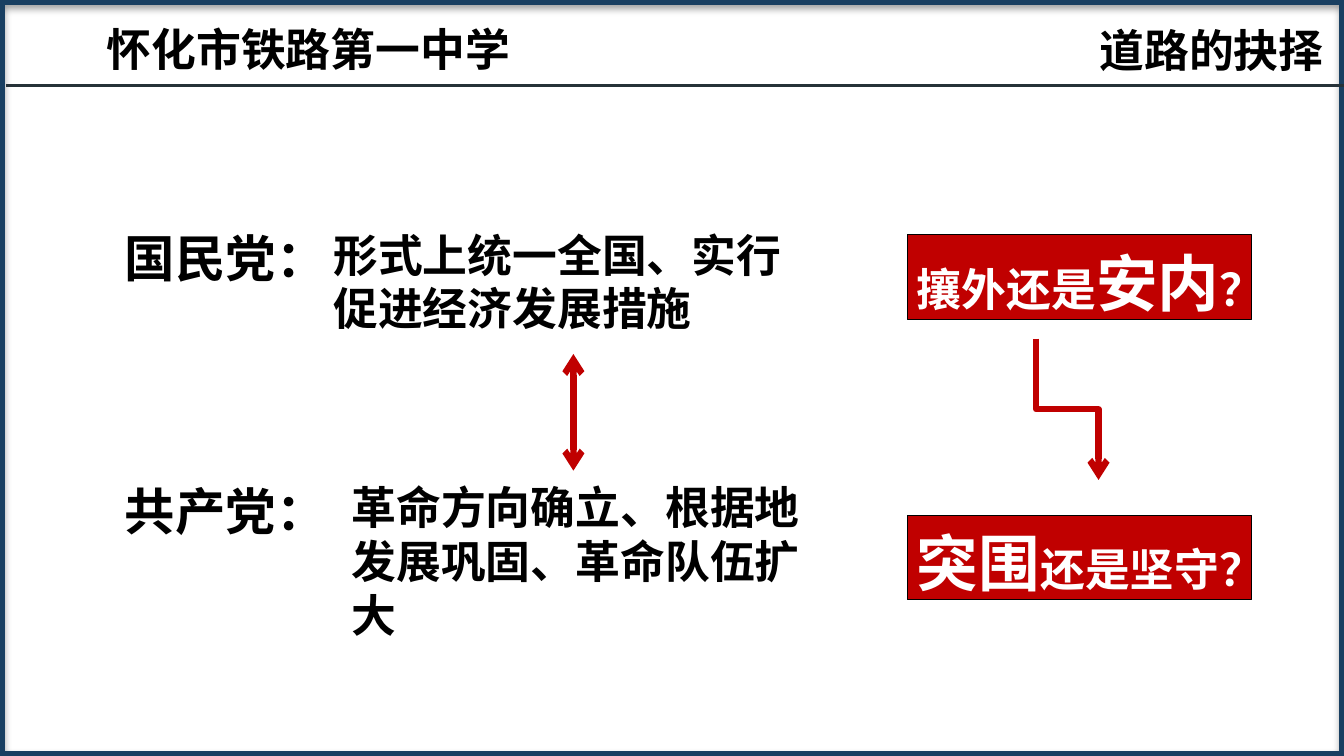
from collections import namedtuple
from dataclasses import dataclass

from lxml.etree import SubElement
from pptx import Presentation
from pptx.dml.color import RGBColor
from pptx.enum.shapes import MSO_CONNECTOR, MSO_SHAPE
from pptx.enum.text import MSO_ANCHOR, MSO_AUTO_SIZE, PP_ALIGN
from pptx.oxml.ns import qn
from pptx.util import Cm, Pt

Box = namedtuple("Box", "left top width height")


@dataclass(frozen=True)
class Theme:
    black: RGBColor = RGBColor(0x00, 0x00, 0x00)
    white: RGBColor = RGBColor(0xFF, 0xFF, 0xFF)
    red: RGBColor = RGBColor(0xC0, 0x00, 0x00)
    frame: RGBColor = RGBColor(0x19, 0x3F, 0x61)
    rule: RGBColor = RGBColor(0x26, 0x32, 0x38)
    body: int = 32
    label: int = 36
    emphasis: int = 44
    leading: float = 1.2
    chinese: str = "Noto Sans CJK SC"
    heading: str = "Noto Sans CJK JP"
    latin: str = "Arial"


THEME = Theme()


def apply_format(target, values):
    for name, value in values.items():
        setattr(target, name, value)


def place(shape, box):
    apply_format(shape, {name: Cm(value) for name, value in box._asdict().items()})


def inside(box, left, top, width, height):
    return Box(box.left + left, box.top + top, width, height)


def write(shape, runs, face=THEME.chinese, color=THEME.black, align=PP_ALIGN.LEFT):
    frame = shape.text_frame
    apply_format(frame, {
        "word_wrap": True, "auto_size": MSO_AUTO_SIZE.NONE,
        "vertical_anchor": MSO_ANCHOR.TOP, "margin_top": Cm(0.24),
        "margin_bottom": Cm(0.13), "margin_left": Cm(0.25), "margin_right": Cm(0.25),
    })
    paragraph = frame.paragraphs[0]
    largest = max(size for _, size in runs)
    apply_format(paragraph, {
        "alignment": align, "space_before": Pt(0),
        "line_spacing": Pt(round(largest * THEME.leading, 1)),
    })
    for text, size in runs:
        run = paragraph.add_run()
        run.text = text
        apply_format(run.font, {"size": Pt(size), "bold": True, "name": face})
        run.font.color.rgb = color
        SubElement(run.font._element, qn("a:ea"), typeface=face)


def add_text(slide, box, text, size=THEME.body, face=THEME.chinese):
    shape = slide.shapes.add_textbox(0, 0, 0, 0)
    place(shape, box)
    write(shape, [(text, size)], face)


def add_line(slide, start, end, color, weight, kind=MSO_CONNECTOR.STRAIGHT, arrows=()):
    points = [Cm(value) for value in (*start, *end)]
    connector = slide.shapes.add_connector(kind, *points)
    connector.line.width = Pt(weight)
    connector.line.color.rgb = color
    outline = connector.line._get_or_add_ln()
    if arrows:
        SubElement(outline, qn("a:round"))
    for arrow in arrows:
        SubElement(outline, qn(f"a:{arrow}"), type="arrow")
    SubElement(connector._element.spPr, qn("a:effectLst"))
    return connector


def add_frame(slide, box):
    frame = slide.shapes.add_shape(MSO_SHAPE.RECTANGLE, 0, 0, 0, 0)
    place(frame, box)
    frame.fill.background()
    frame.line.width = Pt(7)
    frame.line.color.rgb = THEME.frame
    effects = SubElement(frame._element.spPr, qn("a:effectLst"))
    shadow = SubElement(effects, qn("a:outerShdw"), blurRad=str(Pt(5.2)),
                        dist=str(Pt(3)), dir="5400000", rotWithShape="0")
    shade = SubElement(shadow, qn("a:srgbClr"), val=str(THEME.black))
    SubElement(shade, qn("a:alpha"), val="40000")


def add_header(slide, box):
    bottom = box.top + box.height
    add_line(slide, (box.left + 0.15, bottom), (box.left + box.width, bottom),
             THEME.rule, 2.25)
    add_text(slide, inside(box, 2.44, 0.3, 10.85, 1.63), "怀化市铁路第一中学")
    title = slide.shapes.title
    place(title, inside(box, 18.29, 0.33, 15.32, 1.63))
    write(title, [("道路的抉择", THEME.body)], THEME.heading, align=PP_ALIGN.RIGHT)


def add_parties(slide, box):
    second = 6.37
    parties = [
        ("国民党：", "形式上统一全国、实行促进经济发展措施", 0, 5.69, 5.25, 3),
        ("共产党：", "革命方向确立、根据地发展巩固、革命队伍扩大", second, 5.26, 5.71, 4.37),
    ]
    for name, statement, top, name_width, left, height in parties:
        add_text(slide, inside(box, 0, top, name_width, 1.8), name,
                 THEME.label, THEME.latin)
        add_text(slide, inside(box, left, top, 12.62, height), statement)
    center = box.left + 11.55
    add_line(slide, (center, box.top + 3.43), (center, box.top + second),
             THEME.red, 4.5, arrows=("headEnd", "tailEnd"))


def add_choices(slide, box):
    height = 2.13
    choices = [
        [("攘外还是", THEME.body), ("安内", THEME.emphasis), ("？", THEME.body)],
        [("突围", THEME.emphasis), ("还是坚守？", THEME.body)],
    ]
    for index, runs in enumerate(choices):
        shape = slide.shapes.add_shape(MSO_SHAPE.RECTANGLE, 0, 0, 0, 0)
        place(shape, inside(box, 0, index * (box.height - height), box.width, height))
        shape.shadow.inherit = False
        shape.fill.solid()
        shape.fill.fore_color.rgb = THEME.red
        shape.line.width = Pt(0.75)
        shape.line.color.rgb = THEME.black
        write(shape, runs, color=THEME.white)
    elbow = add_line(slide, (box.left + 2.26, box.top + 5.18),
                     (box.left + 5.82, box.top + 3.61), THEME.red, 4.5,
                     MSO_CONNECTOR.ELBOW, ("tailEnd",))
    elbow._element.spPr.xfrm.set("rot", "5400000")


def main():
    presentation = Presentation()
    page = Box(0, 0, 33.87, 19.05)
    apply_format(presentation, {"slide_width": Cm(page.width),
                                "slide_height": Cm(page.height)})
    slide = presentation.slides.add_slide(presentation.slide_layouts[5])
    add_frame(slide, page)
    add_header(slide, Box(0, 0, page.width, 2.16))
    add_parties(slide, Box(2.9, 5.49, 18.33, 10.74))
    add_choices(slide, Box(22.86, 5.92, 8.69, 9.19))
    presentation.save("out.pptx")


if __name__ == "__main__":
    main()
